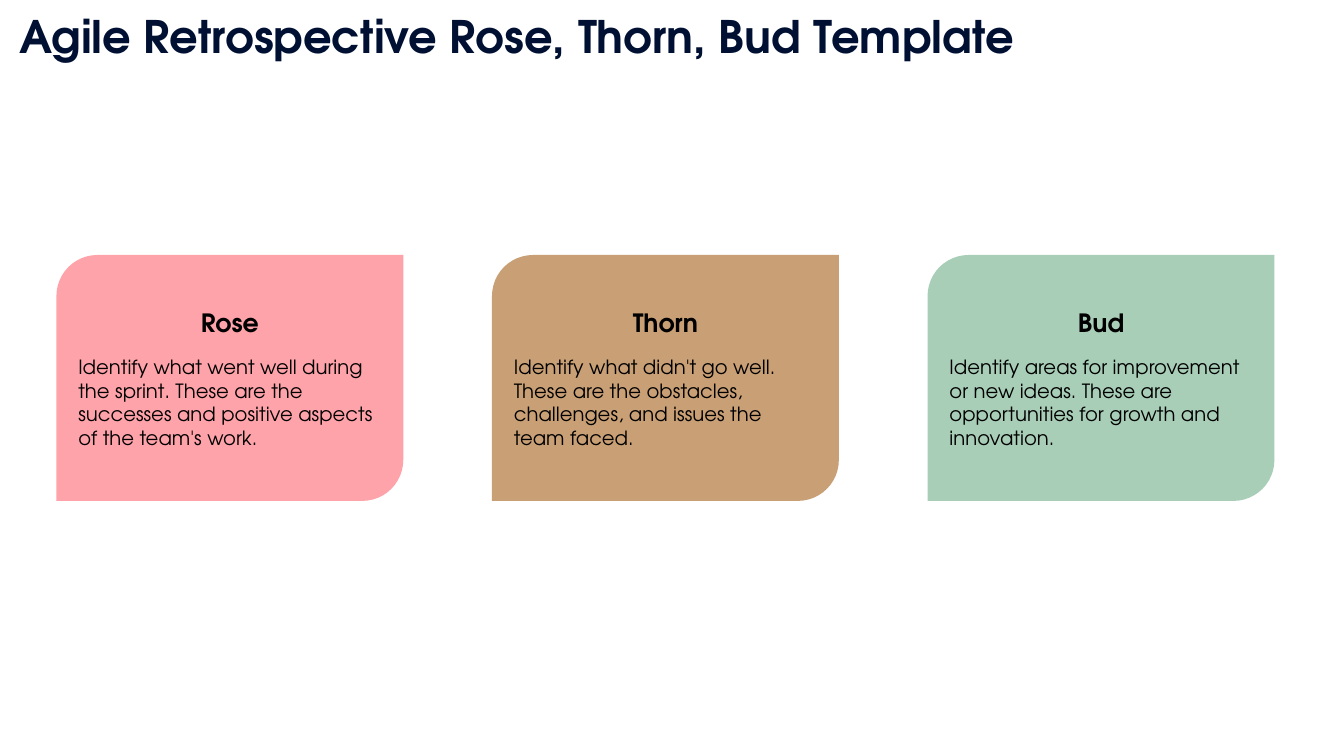
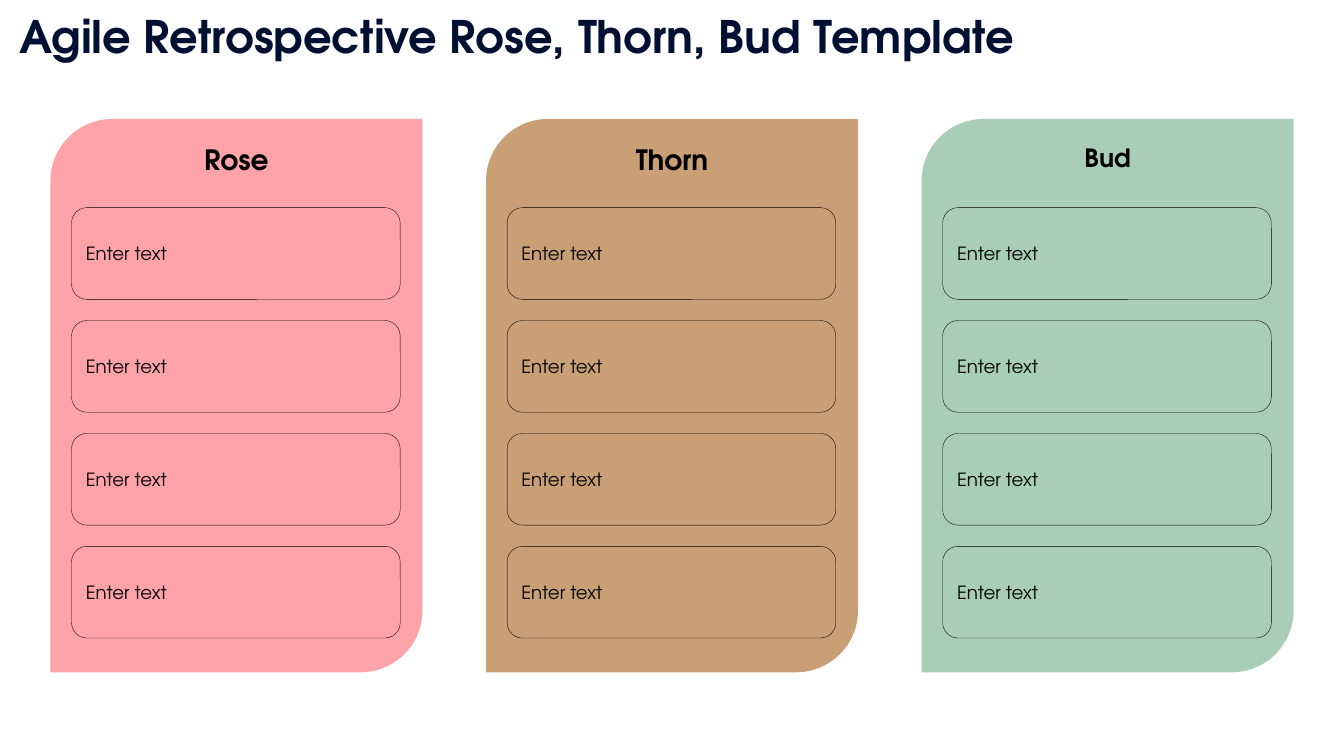
"""Build the two Rose, Thorn, Bud retrospective slides."""
from dataclasses import dataclass

from lxml import etree
from pptx import Presentation
from pptx import util as u
from pptx.dml.color import RGBColor
from pptx.enum import shapes, text
from pptx.oxml.ns import qn


@dataclass(frozen=True)
class Theme:
    """Hold the colours, font and type sizes."""
    font: str = "TeX Gyre Adventor"
    navy: str = "001033"
    ink: str = "000000"
    rose: str = "FF7D86"
    thorn: str = "B3773B"
    bud: str = "84BA99"
    alpha: int = 70
    title: int = 32
    head: int = 20
    label: int = 18
    body: int = 14
    note: int = 13
    gap: float = 12.7
    line: float = 0.25


class Deck:
    """Draw styled elements on a grid of 0.1 inch columns and rows."""

    def __init__(self, theme):
        """Start an empty wide deck."""
        self.theme = theme
        self.prs = Presentation()
        self.prs.slide_width = u.Inches(13.33)
        self.prs.slide_height = u.Inches(7.5)
        self.slide = None

    def grid(self, *cells):
        """Turn grid units into lengths."""
        return [u.Inches(cell / 10) for cell in cells]

    def label(self, para, words, size, color, bold=False, center=False):
        """Set one paragraph and format its runs."""
        para.text = words
        para.alignment = text.PP_ALIGN.CENTER if center else text.PP_ALIGN.LEFT
        for run in para.runs:
            run.font.name = self.theme.font
            run.font.size = u.Pt(size)
            run.font.bold = bold
            run.font.color.rgb = RGBColor.from_string(color)

    def page(self, words):
        """Add a slide and its title."""
        self.slide = self.prs.slides.add_slide(self.prs.slide_layouts[5])
        title = self.slide.shapes.title
        title.left, title.top, title.width, title.height = self.grid(0.9, 0.4, 110, 6.4)
        frame = title.text_frame
        frame.word_wrap = True
        frame.auto_size = text.MSO_AUTO_SIZE.NONE
        frame.vertical_anchor = text.MSO_ANCHOR.TOP
        self.label(frame.paragraphs[0], words, self.theme.title, self.theme.navy, bold=True)

    def shape(self, kind, box, anchor):
        """Add a plain shape that wraps its text."""
        item = self.slide.shapes.add_shape(kind, *self.grid(*box))
        item.shadow.inherit = False
        item.text_frame.word_wrap = True
        item.text_frame.vertical_anchor = anchor
        return item

    def leaf(self, box, color, head, size, anchor):
        """Add a tinted leaf shape with a bold heading."""
        item = self.shape(shapes.MSO_SHAPE.ROUND_2_DIAG_RECTANGLE, box, anchor)
        item.fill.solid()
        item.fill.fore_color.rgb = RGBColor.from_string(color)
        tint = item.element.spPr.find(".//" + qn("a:srgbClr"))
        etree.SubElement(tint, qn("a:alpha"), val=str(self.theme.alpha * 1000))
        item.line.fill.background()
        self.label(item.text_frame.paragraphs[0], head, size, self.theme.ink,
                   bold=True, center=True)
        return item

    def card(self, box, color, head, body):
        """Add a leaf with a heading and a description."""
        frame = self.leaf(box, color, head, self.theme.label, text.MSO_ANCHOR.MIDDLE).text_frame
        frame.paragraphs[0].space_after = u.Pt(self.theme.gap)
        self.label(frame.add_paragraph(), body, self.theme.body, self.theme.ink)

    def panel(self, box, color, head, size):
        """Add a tall leaf headed at the top."""
        self.leaf(box, color, head, size, text.MSO_ANCHOR.TOP)

    def field(self, box, words):
        """Add an outlined entry field."""
        item = self.shape(shapes.MSO_SHAPE.ROUNDED_RECTANGLE, box, text.MSO_ANCHOR.MIDDLE)
        item.fill.background()
        item.line.color.rgb = RGBColor.from_string(self.theme.ink)
        item.line.width = u.Pt(self.theme.line)
        self.label(item.text_frame.paragraphs[0], words, self.theme.note, self.theme.ink)


def main():
    """Build and save the deck."""
    theme = Theme()
    deck = Deck(theme)
    title = "Agile Retrospective Rose, Thorn, Bud Template"
    step, rise = 43.2, 11.2
    topics = [
        ("Rose", theme.rose, theme.head,
         "Identify what went well during the sprint. These are the successes "
         "and positive aspects of the team's work."),
        ("Thorn", theme.thorn, theme.head,
         "Identify what didn't go well. These are the obstacles, challenges, "
         "and issues the team faced."),
        ("Bud", theme.bud, theme.label,
         "Identify areas for improvement or new ideas. These are opportunities "
         "for growth and innovation."),
    ]

    deck.page(title)
    for col, (head, color, _, body) in enumerate(topics):
        deck.card((5.6 + col * step, 25.3, 34.4, 24.4), color, head, body)

    deck.page(title)
    for col, (head, color, size, _) in enumerate(topics):
        left = 5 + col * step
        deck.panel((left, 11.8, 36.9, 54.9), color, head, size)
        for row in range(4):
            deck.field((left + 2.1, 20.6 + row * rise, 32.6, 9.1), "Enter text")

    deck.prs.save("out.pptx")


if __name__ == "__main__":
    main()
